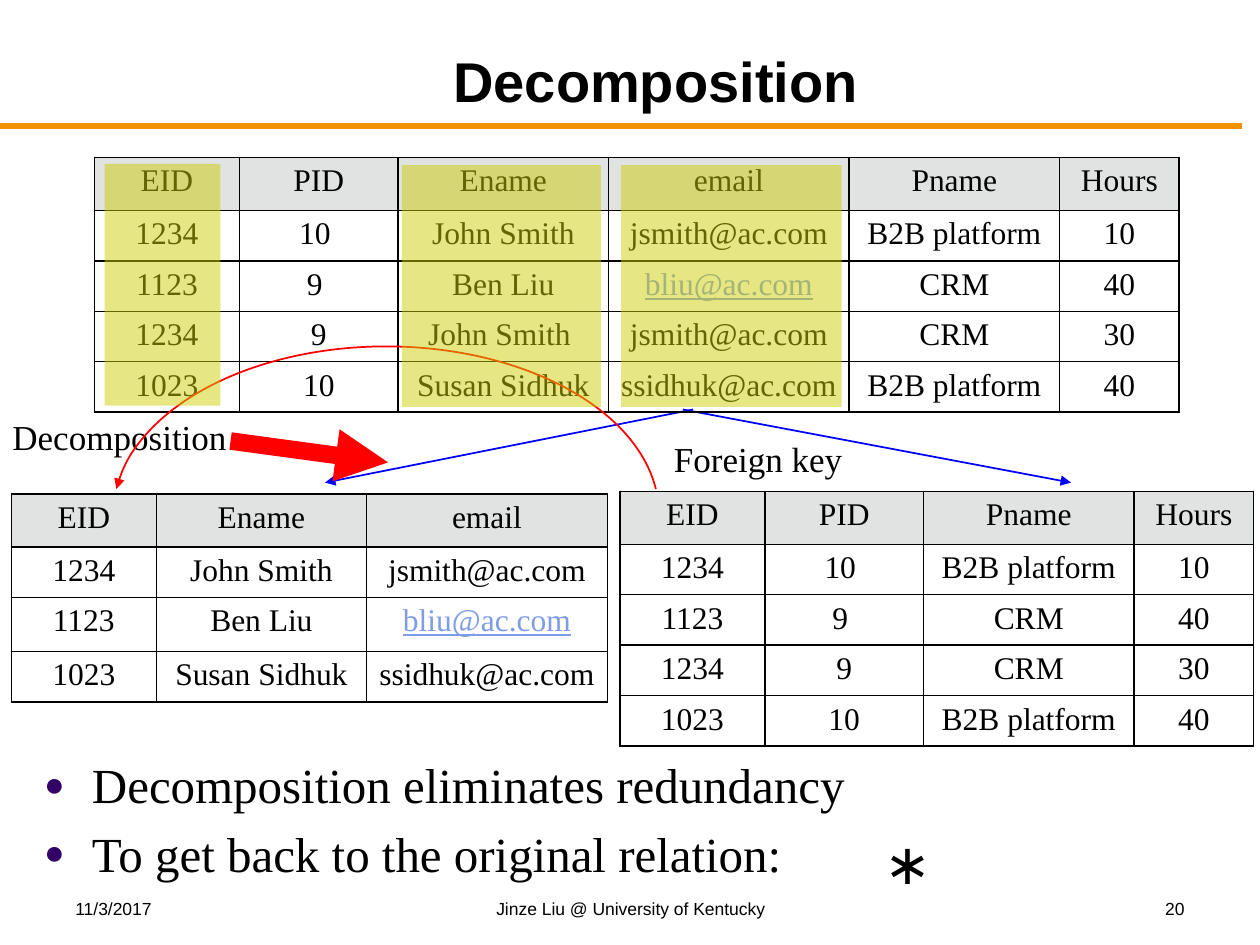
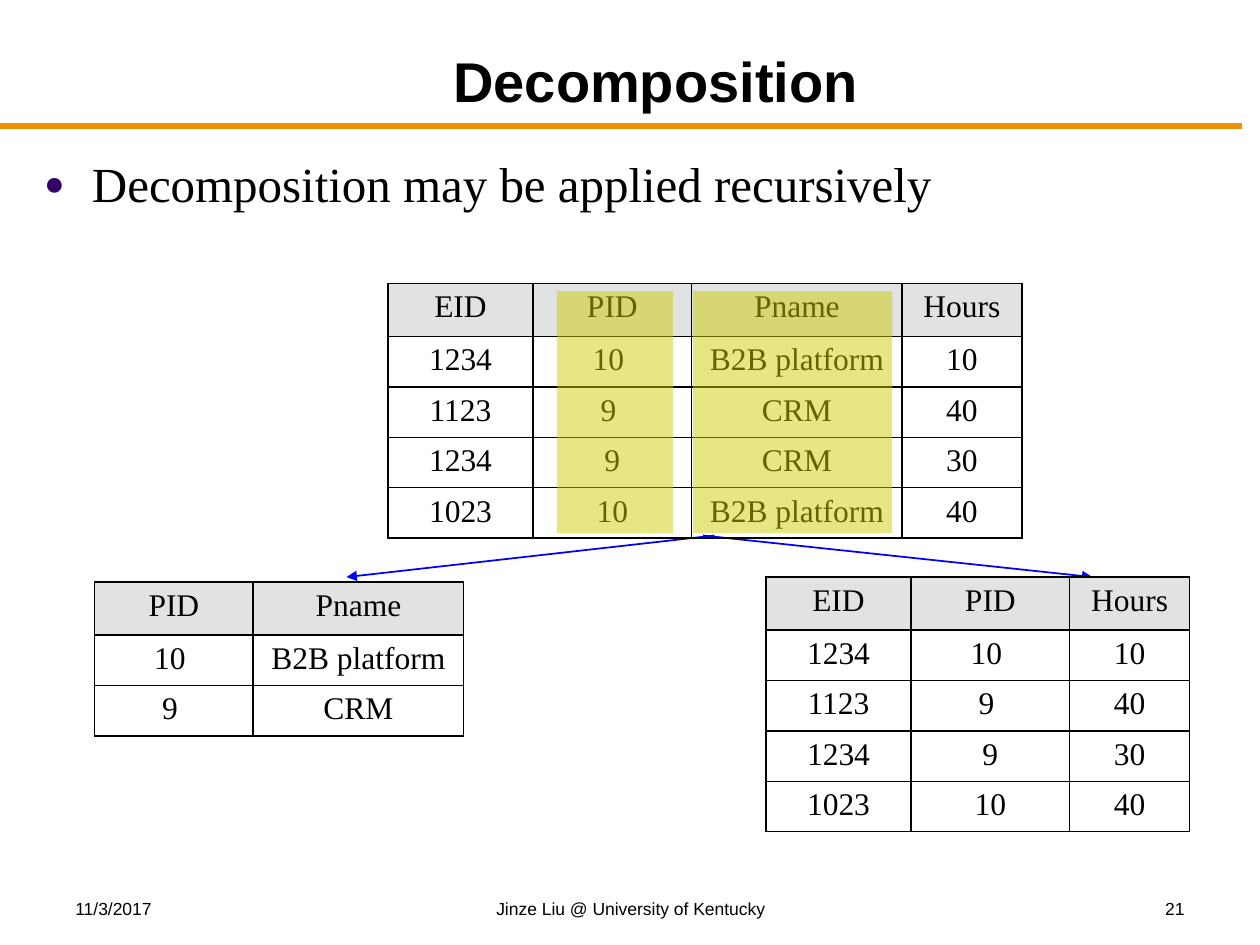
"""Build two slides on splitting a relation into smaller tables."""
from typing import NamedTuple

from pptx import Presentation
from pptx.dml.color import RGBColor as RGB
from pptx.enum.shapes import MSO_CONNECTOR as Link, MSO_SHAPE as Kind
from pptx.enum.text import MSO_ANCHOR as Anchor, MSO_AUTO_SIZE as Auto, PP_ALIGN as Align
from pptx.oxml import parse_xml
from pptx.oxml.ns import nsdecls, qn
from pptx.util import Emu, Pt

PX = 9144
BLACK = RGB(0x00, 0x00, 0x00)
ORANGE = RGB(0xEF, 0x91, 0x00)
GREY = RGB(0xE1, 0xE3, 0xE3)
YELLOW = RGB(0xCC, 0xCC, 0x00)
BLUE = RGB(0x00, 0x00, 0xFF)
RED = RGB(0xFF, 0x00, 0x00)
SKY = RGB(0x7E, 0x9C, 0xE8)
PURPLE = RGB(0x33, 0x00, 0x66)

SERIF = "Times New Roman"
TITLE = {"name": "Arial", "size": Pt(32), "bold": True}
BODY = {"name": SERIF, "size": Pt(28)}
LABEL = {"name": SERIF, "size": Pt(20)}
CELL = {"name": SERIF, "size": Pt(18)}
FOOT = {"name": "Arial", "size": Pt(10)}
STAR = {"name": "Lato", "size": Pt(32)}

WIDTHS = {"EID": 115, "PID": 126, "Ename": 167, "email": 191, "Pname": 167, "Hours": 95}
LINK = "bliu@ac.com"
DATA = [
    ("1234", "10 ", "John Smith", "jsmith@ac.com", "B2B platform", "10"),
    ("1123", "9 ", "Ben Liu", LINK, "CRM", "40"),
    ("1234", "9", "John Smith ", "jsmith@ac.com", "CRM", "30"),
    ("1023", "10", "Susan Sidhuk", "ssidhuk@ac.com", "B2B platform", "40"),
]
WORKS = ["EID", "PID", "Pname", "Hours"]


class Box(NamedTuple):
    left: int
    top: int
    width: int
    height: int


class Grid(NamedTuple):
    left: int
    top: int
    heads: list[str]
    picks: tuple[int, ...] = (0, 1, 2, 3)
    tall: int = 0


class Arrow(NamedTuple):
    start: tuple[int, int]
    end: tuple[int, int]
    color: RGB = BLUE
    weight: int = 1


class Note(NamedTuple):
    box: Box
    text: str
    look: dict
    gap: int = 0
    align: Align = Align.LEFT
    wrap: bool = True


class Page(NamedTuple):
    number: str
    body: Box
    points: list[str]
    arrows: list[Arrow]
    grids: list[Grid]
    notes: list[Note]
    marks: list[Box]
    arc: Box | None = None


def scale(*sizes: int) -> list[Emu]:
    return [Emu(size * PX) for size in sizes]


def tag(text: str):
    name, *rest = text.split(">", 1)
    close = name.endswith("/")
    name = name.rstrip("/")
    return parse_xml(f"<{name} {nsdecls('a')}{'/' if close else ''}>{rest[0]}")


def put(item, values: dict) -> None:
    for name, value in values.items():
        setattr(item, name, value)


def write(para, text: str, look: dict, gap: int = 0, color: RGB = BLACK) -> None:
    run = para.add_run()
    run.text = text
    put(run.font, look)
    run.font.color.rgb = color
    if gap:
        prop = para._p.get_or_add_pPr()
        prop.insert(0, tag(f'<a:spcBef><a:spcPct val="{gap * 1000}"/></a:spcBef>'[1:]))


def bullet(para) -> None:
    prop = para._p.get_or_add_pPr()
    indent = 38 * PX
    prop.set("marL", str(indent))
    prop.set("indent", str(-indent))
    for part in (f'a:buClr><a:srgbClr val="{PURPLE}"/></a:buClr>',
                 'a:buSzPct val="70000"/>', 'a:buFont typeface="Arial"/>',
                 'a:buChar char="●"/>'):
        prop.append(tag(part))


def draw_line(slide, arrow: Arrow, tip: bool = True) -> None:
    line = slide.shapes.add_connector(Link.STRAIGHT, *scale(*arrow.start, *arrow.end))
    line.line.color.rgb = arrow.color
    line.line.width = Pt(arrow.weight)
    if tip:
        line.line._get_or_add_ln().append(tag('a:tailEnd type="triangle"/>'))
    line._element.spPr.append(tag("a:effectLst/>"))


def draw_note(slide, note: Note) -> None:
    frame = slide.shapes.add_textbox(*scale(*note.box)).text_frame
    frame.word_wrap = note.wrap
    para = frame.paragraphs[0]
    para.alignment = note.align
    write(para, note.text, note.look, note.gap)


def edge(cell) -> None:
    prop = cell._tc.get_or_add_tcPr()
    for spot, side in enumerate("LRTB"):
        prop.insert(spot, tag(
            f'a:ln{side} w="12700"><a:solidFill><a:srgbClr val="{BLACK}"/>'
            f'</a:solidFill></a:ln{side}>'))


def draw_grid(slide, grid: Grid) -> None:
    names = list(WIDTHS)
    rows = [grid.heads] + [
        [DATA[pick][names.index(head)] for head in grid.heads] for pick in grid.picks]
    highs = [42] + [43 if row == grid.tall else 40 for row in range(1, len(rows))]
    wide = sum(WIDTHS[head] for head in grid.heads)
    table = slide.shapes.add_table(
        len(rows), len(grid.heads), *scale(grid.left, grid.top, wide, sum(highs))).table
    put(table, {"first_row": False, "horz_banding": False})
    for col, head in zip(table.columns, grid.heads):
        col.width = Emu(WIDTHS[head] * PX)
    for y, row in enumerate(rows):
        table.rows[y].height = Emu(highs[y] * PX)
        for x, text in enumerate(row):
            cell = table.cell(y, x)
            if y:
                cell.fill.background()
            else:
                cell.fill.solid()
                cell.fill.fore_color.rgb = GREY
            edge(cell)
            para = cell.text_frame.paragraphs[0]
            para.alignment = Align.CENTER
            linked = text == LINK
            write(para, text, CELL | {"underline": linked}, 20, SKY if linked else BLACK)


def draw_mark(slide, box: Box) -> None:
    mark = slide.shapes.add_shape(Kind.RECTANGLE, *scale(*box))
    mark.shadow.inherit = False
    mark.line.fill.background()
    mark.fill.solid()
    mark.fill.fore_color.rgb = YELLOW
    color = mark._element.spPr.find(".//" + qn("a:srgbClr"))
    color.append(tag('a:alpha val="49000"/>'))


def draw_arc(slide, box: Box) -> None:
    arc = slide.shapes.add_shape(Kind.ARC, *scale(*box))
    arc.shadow.inherit = False
    arc.fill.background()
    for spot, angle in enumerate((185.3, 354.7)):
        arc.adjustments[spot] = angle * 0.6
    arc.line.color.rgb = RED
    arc.line.width = Pt(1)
    arc.line._get_or_add_ln().append(tag('a:headEnd type="triangle"/>'))


def place(holder, box: Box, anchor: Anchor):
    put(holder, dict(zip(Box._fields, scale(*box))))
    frame = holder.text_frame
    put(frame, {"word_wrap": True, "auto_size": Auto.NONE, "vertical_anchor": anchor})
    return frame


def draw_base(slide, page: Page) -> None:
    draw_line(slide, Arrow((0, 100), (986, 100), ORANGE, 3), tip=False)
    for note in (
        Note(Box(50, 708, 233, 25), "11/3/2017", FOOT),
        Note(Box(342, 708, 317, 25), "Jinze Liu @ University of Kentucky", FOOT,
             align=Align.CENTER),
        Note(Box(717, 708, 233, 25), page.number, FOOT, align=Align.RIGHT),
    ):
        draw_note(slide, note)
    title, body = slide.placeholders
    head = place(title, Box(108, 25, 825, 70), Anchor.BOTTOM).paragraphs[0]
    head.alignment = Align.CENTER
    write(head, "Decomposition", TITLE)
    frame = place(body, page.body, Anchor.TOP)
    for spot, point in enumerate(page.points):
        para = frame.add_paragraph() if spot else frame.paragraphs[0]
        write(para, point, BODY, 20)
        bullet(para)


def draw_page(deck, page: Page) -> None:
    slide = deck.slides.add_slide(deck.slide_layouts[1])
    draw_base(slide, page)
    for draw, items in ((draw_line, page.arrows), (draw_grid, page.grids),
                        (draw_note, page.notes)):
        for item in items:
            draw(slide, item)
    if page.arc:
        draw_arc(slide, page.arc)
    for mark in page.marks:
        draw_mark(slide, mark)


PAGES = [
    Page(
        "20", Box(25, 594, 942, 122),
        ["Decomposition eliminates redundancy", "To get back to the original relation:"],
        [Arrow((550, 325), (258, 383)), Arrow((542, 325), (850, 383)),
         Arrow((183, 350), (308, 367), RED, 10)],
        [Grid(75, 125, list(WIDTHS)),
         Grid(9, 392, ["EID", "Ename", "email"], (0, 1, 3), tall=2),
         Grid(492, 390, WORKS)],
        [Note(Box(692, 653, 42, 63), "∗", STAR, 20, wrap=False),
         Note(Box(0, 325, 192, 43), "Decomposition", LABEL, 50),
         Note(Box(525, 342, 192, 43), "Foreign key", LABEL, 50)],
        [Box(83, 130, 92, 192), Box(319, 131, 158, 192), Box(493, 131, 175, 192)],
        Box(90, 275, 433, 266),
    ),
    Page(
        "21", Box(25, 117, 942, 575),
        ["Decomposition may be applied recursively"],
        [Arrow((567, 425), (275, 458)), Arrow((558, 425), (867, 458))],
        [Grid(308, 225, WORKS),
         Grid(75, 462, ["PID", "Pname"], (0, 1)),
         Grid(608, 458, ["EID", "PID", "Hours"])],
        [],
        [Box(442, 231, 92, 192), Box(550, 231, 158, 192)],
    ),
]


def main() -> None:
    deck = Presentation()
    deck.slide_width, deck.slide_height = scale(1000, 750)
    for page in PAGES:
        draw_page(deck, page)
    deck.save("out.pptx")


if __name__ == "__main__":
    main()
